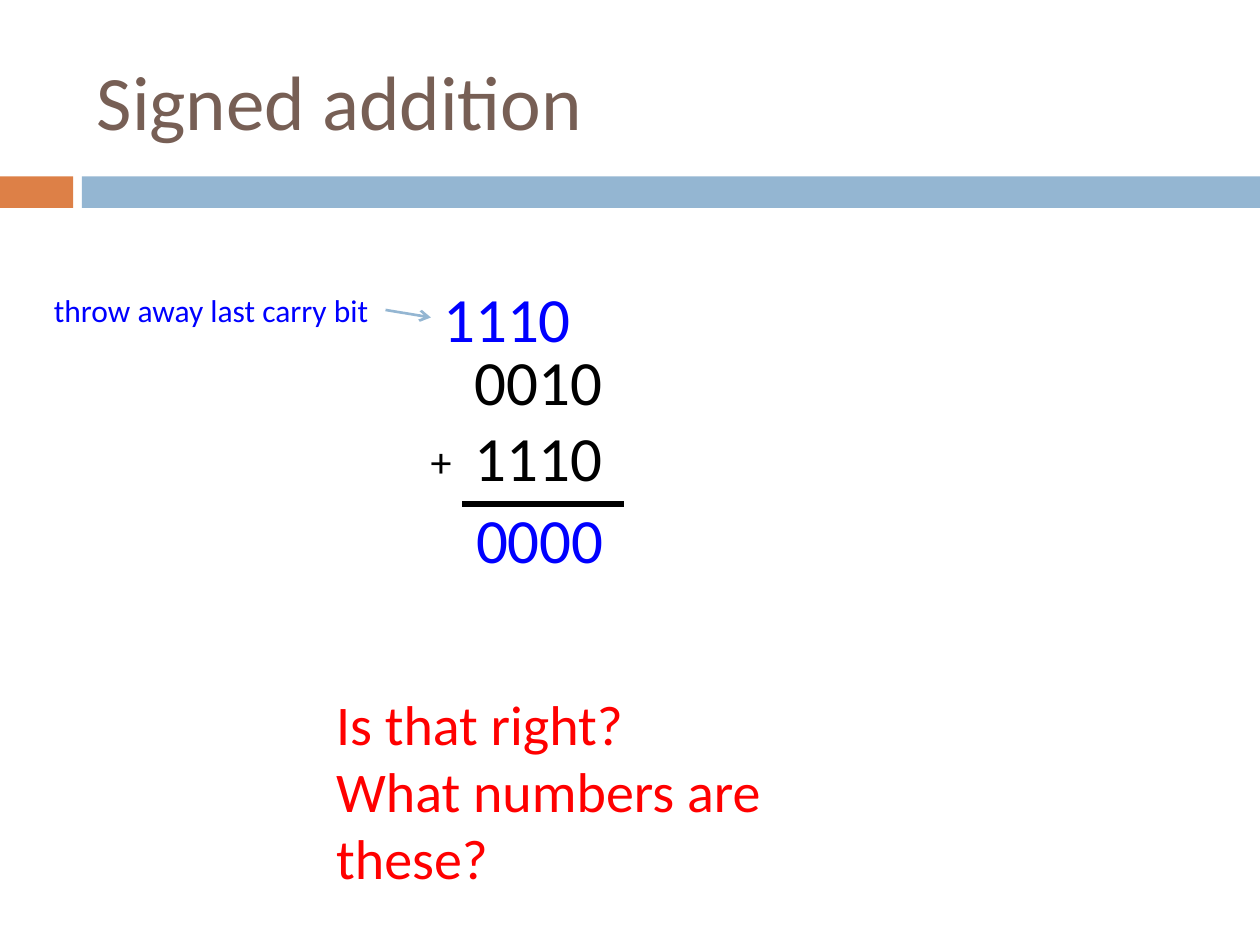
from lxml import etree
from pptx import Presentation
from pptx.dml.color import RGBColor
from pptx.enum.shapes import MSO_CONNECTOR, MSO_SHAPE
from pptx.enum.text import MSO_ANCHOR
from pptx.oxml.ns import qn
from pptx.util import Inches, Pt

RECT = MSO_SHAPE.RECTANGLE
STRAIGHT = MSO_CONNECTOR.STRAIGHT
TOP, MIDDLE = MSO_ANCHOR.TOP, MSO_ANCHOR.MIDDLE
FONT = "Calibri"
COLORS = {
    "title": "775F55",
    "accent": "DD8047",
    "band": "94B6D2",
    "digits": "000000",
    "result": "0000FF",
    "question": "FF0000",
}


def rgb(name):
    return RGBColor.from_string(COLORS[name])


def add_text(s, text, x, y, w, h, size=36, color="digits", anchor=TOP, wrap=False):
    sp = s.shapes.add_textbox(Inches(x), Inches(y), Inches(w), Inches(h))
    tf = sp.text_frame
    tf.word_wrap = wrap
    tf.vertical_anchor = anchor
    for i, line in enumerate(text.split("\n")):
        p = tf.paragraphs[0] if i == 0 else tf.add_paragraph()
        r = p.add_run()
        r.text = line
        r.font.name = FONT
        r.font.size = Pt(size)
        r.font.color.rgb = rgb(color)


def add_bar(s, x, y, w, h, color):
    sp = s.shapes.add_shape(RECT, Inches(x), Inches(y), Inches(w), Inches(h))
    sp.shadow.inherit = False
    sp.fill.solid()
    sp.fill.fore_color.rgb = rgb(color)
    sp.line.fill.background()


def add_line(s, x1, y1, x2, y2, color, width, arrow=False):
    cn = s.shapes.add_connector(STRAIGHT, Inches(x1), Inches(y1), Inches(x2), Inches(y2))
    cn.line.color.rgb = rgb(color)
    cn.line.width = Pt(width)
    if arrow:
        etree.SubElement(cn.line._get_or_add_ln(), qn("a:tailEnd"), type="arrow")
    etree.SubElement(cn._element.spPr, qn("a:effectLst"))


def add_header(s, x, y, w):
    add_bar(s, x, y + 1.4, 0.58, 0.25, "accent")
    add_bar(s, x + 0.65, y + 1.4, w - 0.65, 0.25, "band")
    add_text(s, "Signed addition", x + 0.67, y + 0.25, 8.92, 1.08,
             size=44, color="title", anchor=MIDDLE, wrap=True)


def add_sum(s, x, y, w):
    add_text(s, "0010\n1110", x, y + 0.5, w, 1.31)
    add_line(s, x, y + 1.83, x + 1.28, y + 1.83, "digits", 3)
    add_text(s, "0000", x + 0.01, y + 1.75, w, 0.71, color="result")
    add_text(s, "1110", x - 0.25, y, w, 0.71, color="result")
    add_text(s, "+", x - 0.35, y + 1.24, 0.43, 0.5, size=24)


def add_carry_note(s, x, y, w, h):
    add_text(s, "throw away last carry bit", x, y, w, h, size=18, color="result")
    add_line(s, x + w, y + h / 2, x + w + 0.36, y + h / 2 + 0.06, "band", 1.5, arrow=True)


def add_question(s, x, y, w, h):
    add_text(s, "Is that right?\nWhat numbers are these?", x, y, w, h,
             size=32, color="question", wrap=True)


def main():
    prs = Presentation()
    prs.slide_width, prs.slide_height = Inches(10), Inches(7.5)
    s = prs.slides.add_slide(prs.slide_layouts[6])
    add_header(s, 0, 0, 10)
    add_sum(s, 3.67, 2.17, 1.32)
    add_question(s, 2.57, 5.42, 4.76, 1.18)
    add_carry_note(s, 0.33, 2.26, 2.73, 0.4)
    prs.save("out.pptx")


if __name__ == "__main__":
    main()
